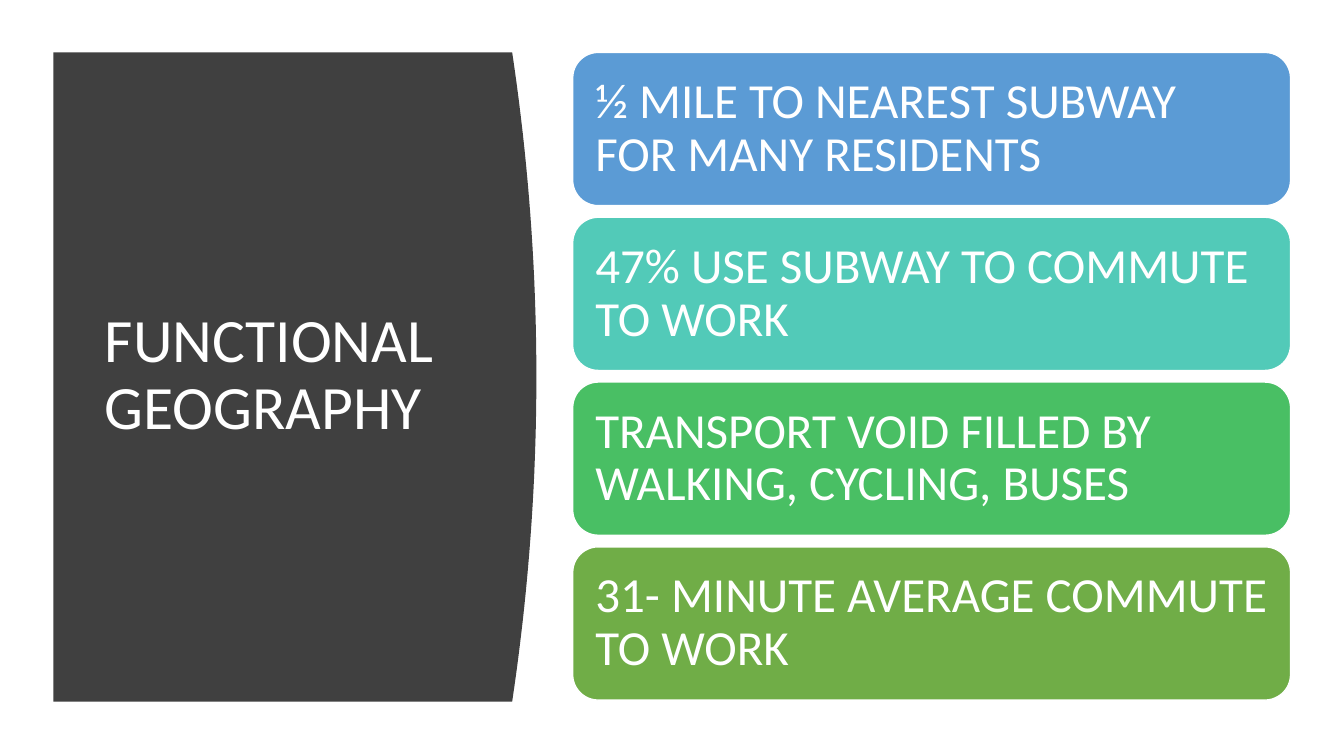
from pptx import Presentation
from pptx.dml.color import RGBColor
from pptx.enum.shapes import MSO_SHAPE
from pptx.enum.text import MSO_ANCHOR, PP_ALIGN
from pptx.util import Inches, Pt

WHITE = RGBColor(0xFF, 0xFF, 0xFF)
CHARCOAL = RGBColor(0x40, 0x40, 0x40)
BLUE = RGBColor(0x5B, 0x9B, 0xD5)
TEAL = RGBColor(0x52, 0xCA, 0xB8)
GREEN = RGBColor(0x49, 0xBF, 0x64)
OLIVE = RGBColor(0x70, 0xAD, 0x47)

TITLE = "FUNCTIONAL GEOGRAPHY"
FACTS = [
    ("½ MILE TO NEAREST SUBWAY FOR MANY RESIDENTS", BLUE),
    ("47% USE SUBWAY TO COMMUTE TO WORK", TEAL),
    ("TRANSPORT VOID FILLED BY WALKING, CYCLING, BUSES", GREEN),
    ("31- MINUTE AVERAGE COMMUTE TO WORK", OLIVE),
]

PANEL_LEFT, PANEL_TOP, PANEL_BOTTOM = 0.53, 0.52, 6.96
PANEL_CORNER, PANEL_BULGE = 5.08, 0.24
CURVE_STEPS = 40
CARD_LEFT, CARD_TOP, CARD_WIDTH, CARD_HEIGHT = 5.68, 0.52, 7.12, 1.52
CARD_PITCH = 1.635


def write_text(shape, text, size, inset_x, inset_y):
    frame = shape.text_frame
    frame.word_wrap = True
    frame.vertical_anchor = MSO_ANCHOR.MIDDLE
    frame.margin_left = frame.margin_right = Inches(inset_x)
    frame.margin_top = frame.margin_bottom = Inches(inset_y)
    paragraph = frame.paragraphs[0]
    paragraph.alignment = PP_ALIGN.LEFT
    paragraph.line_spacing = 0.9
    run = paragraph.add_run()
    run.text = text
    run.font.name = "Calibri"
    run.font.size = Pt(size)
    run.font.color.rgb = WHITE


def add_panel(slide):
    """Draw the dark panel, whose right side bulges as a parabola."""
    edge = []
    for step in range(CURVE_STEPS + 1):
        share = step / CURVE_STEPS
        x = PANEL_CORNER + PANEL_BULGE * (1 - (2 * share - 1) ** 2)
        y = PANEL_TOP + share * (PANEL_BOTTOM - PANEL_TOP)
        edge.append((Inches(x), Inches(y)))
    builder = slide.shapes.build_freeform(Inches(PANEL_LEFT), Inches(PANEL_TOP))
    builder.add_line_segments(edge + [(Inches(PANEL_LEFT), Inches(PANEL_BOTTOM))])
    panel = builder.convert_to_shape()
    panel.shadow.inherit = False
    panel.fill.solid()
    panel.fill.fore_color.rgb = CHARCOAL
    panel.line.fill.background()
    return panel


def add_card(slide, index, text, color):
    card = slide.shapes.add_shape(
        MSO_SHAPE.ROUNDED_RECTANGLE, Inches(CARD_LEFT),
        Inches(CARD_TOP + index * CARD_PITCH), Inches(CARD_WIDTH), Inches(CARD_HEIGHT))
    card.shadow.inherit = False
    card.fill.solid()
    card.fill.fore_color.rgb = color
    card.line.color.rgb = WHITE
    card.line.width = Pt(1)
    write_text(card, text, 35, 0.15, 0.15)


def main():
    presentation = Presentation()
    presentation.slide_width, presentation.slide_height = Inches(13.33), Inches(7.5)
    slide = presentation.slides.add_slide(presentation.slide_layouts[5])

    panel = add_panel(slide)
    title = slide.shapes.title
    title.left, title.top = Inches(0.94), Inches(1.11)
    title.width, title.height = Inches(3.74), Inches(5.24)
    write_text(title, TITLE, 44, 0.1, 0.05)
    panel.element.addnext(title.element)  # the title lies in front of the panel

    for index, (text, color) in enumerate(FACTS):
        add_card(slide, index, text, color)
    presentation.save("out.pptx")


if __name__ == "__main__":
    main()
